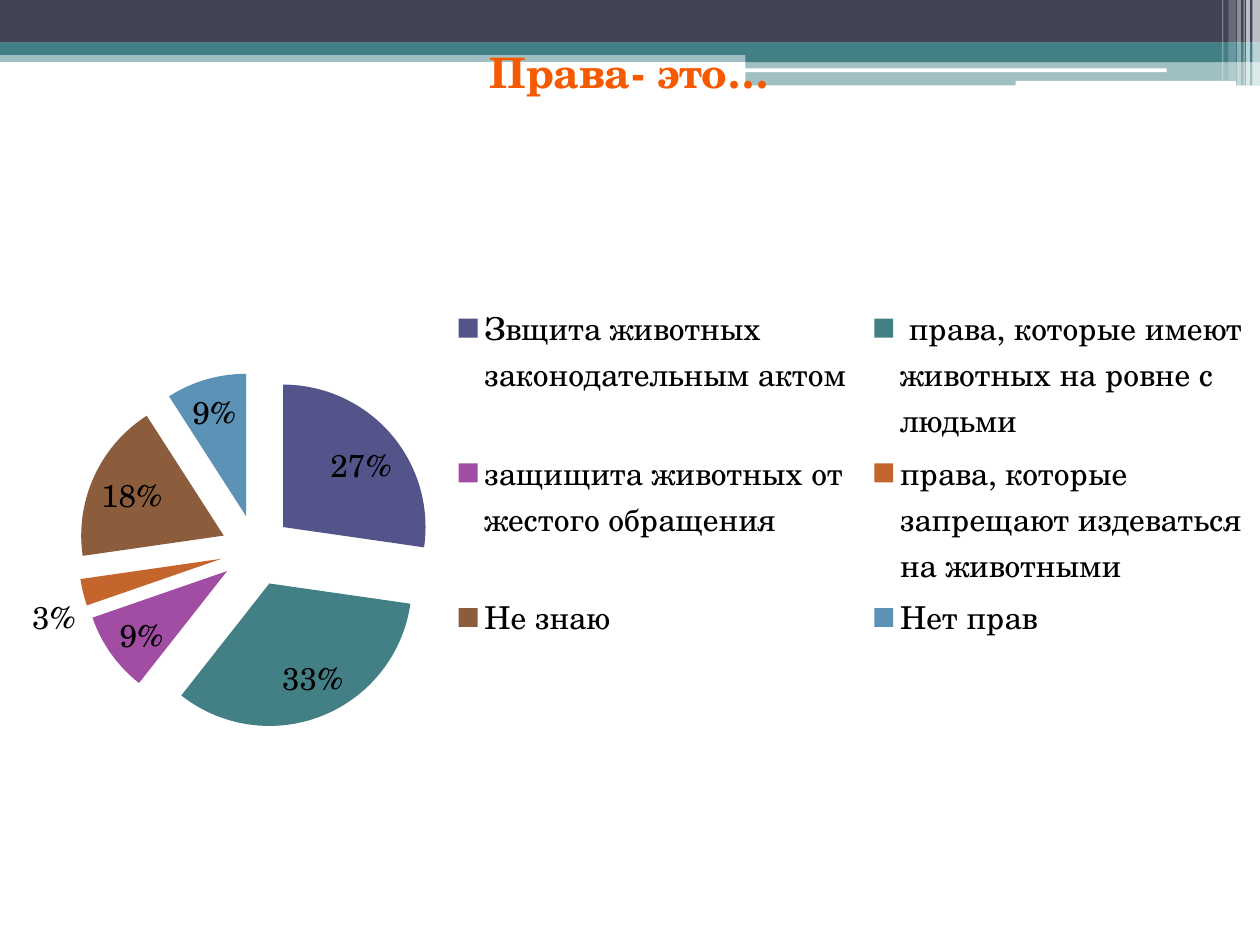
from dataclasses import dataclass

from lxml import etree
from pptx import Presentation
from pptx.chart.data import CategoryChartData
from pptx.dml.color import RGBColor
from pptx.enum import chart as charts, shapes
from pptx.oxml import ns
from pptx.util import Pt


@dataclass(frozen=True)
class Theme:
    dark: str = "424456"
    teal: str = "438086"
    white: str = "FFFFFF"
    black: str = "000000"
    title: str = "F55A00"
    font: str = "TeX Gyre Schola"
    title_size: int = 24
    body_size: int = 18


@dataclass(frozen=True)
class Bar:
    """A strip of the header; lengths in points, opacity in percent."""
    left: float
    top: float
    width: float
    height: float
    color: str
    opacity: int = 100
    rounded: bool = False


@dataclass(frozen=True)
class Answer:
    label: str
    percent: int
    color: str


@dataclass(frozen=True)
class Area:
    """A part of the chart; lengths in points."""
    left: float
    top: float
    width: float | None = None
    height: float | None = None


THEME = Theme()
WIDTH, HEIGHT = 720, 540
TITLE = "Права- это…"
EXPLOSION = 25

BARS = [
    Bar(0, 28.8, WIDTH, 6.6, THEME.teal, 50),
    Bar(0, 0, WIDTH, 24.4, THEME.dark),
    Bar(0, 24.2, WIDTH, 7.2, THEME.teal),
    Bar(426, 28.3, 294, 7.2, THEME.teal),
    Bar(426, 34.7, 294, 14.1, THEME.teal, 50),
    Bar(425.5, 39.1, 241.2, 2.16, THEME.white, rounded=True),
    Bar(580.3, 46.3, 126, 2.9, THEME.white, rounded=True),
    Bar(715.7, 0, 4.3, 48.8, THEME.white, 65),
    Bar(712.1, 0, 2.16, 48.8, THEME.white, 65),
    Bar(710.6, 0, 0.72, 48.8, THEME.white, 60),
    Bar(707, 0, 2.16, 48.8, THEME.white, 40),
    Bar(702, 0, 4.3, 46.1, THEME.white, 20),
    Bar(698.4, 0, 0.72, 46.1, THEME.white, 30),
]

# Line breaks keep the legend narrow enough for two columns.
ANSWERS = [
    Answer("Звщита животных\nзаконодательным актом", 27, "53548A"),
    Answer(" права, которые имеют\nживотных на ровне с\nлюдьми", 33, "438086"),
    Answer("защищита животных от\nжестого обращения", 9, "A04DA3"),
    Answer("права, которые\nзапрещают издеваться\nна животными", 3, "C4652D"),
    Answer("Не знаю", 18, "8B5D3D"),
    Answer("Нет прав", 9, "5C92B5"),
]

TITLE_AREA = Area(275.3, 15)
PIE_AREA = Area(44.6, 212.8, 203.6, 203.6)
LEGEND_AREA = Area(252, 170.5, 468, 199.5)


def draw_bar(slide, bar: Bar) -> None:
    kind = shapes.MSO_SHAPE.ROUNDED_RECTANGLE if bar.rounded else shapes.MSO_SHAPE.RECTANGLE
    shape = slide.shapes.add_shape(
        kind, Pt(bar.left), Pt(bar.top), Pt(bar.width), Pt(bar.height))
    shape.shadow.inherit = False
    shape.line.fill.background()
    shape.fill.solid()
    shape.fill.fore_color.rgb = RGBColor.from_string(bar.color)
    if bar.opacity < 100:
        color = shape.fill._xPr.find(ns.qn("a:solidFill"))[0]
        etree.SubElement(color, ns.qn("a:alpha"), val=str(bar.opacity * 1000))


def format_font(font, *, size: int, color: str, bold: bool = False) -> None:
    font.name = THEME.font
    font.size = Pt(size)
    font.bold = bold
    font.color.rgb = RGBColor.from_string(color)


def write_text(text_frame, text: str, **font_format) -> None:
    run = text_frame.paragraphs[0].add_run()
    run.text = text
    format_font(run.font, **font_format)


def place(element, area: Area, index: int, inner: bool = False) -> None:
    """Give a chart part a manual layout, as child number index."""
    for old in element.findall(ns.qn("c:layout")):
        element.remove(old)
    layout = etree.Element(ns.qn("c:layout"))
    manual = etree.SubElement(layout, ns.qn("c:manualLayout"))
    settings = {"layoutTarget": "inner"} if inner else {}
    settings |= {"xMode": "edge", "yMode": "edge",
                 "x": area.left / WIDTH, "y": area.top / HEIGHT}
    if area.width and area.height:
        settings |= {"w": area.width / WIDTH, "h": area.height / HEIGHT}
    for name, value in settings.items():
        etree.SubElement(manual, ns.qn(f"c:{name}"), val=str(value))
    element.insert(index, layout)


def explode(series) -> None:
    explosion = etree.Element(ns.qn("c:explosion"), val=str(EXPLOSION))
    series._element.find(ns.qn("c:dPt")).addprevious(explosion)


def draw_pie(slide, answers: list[Answer]) -> None:
    data = CategoryChartData()
    data.categories = [answer.label for answer in answers]
    data.add_series(TITLE, [answer.percent for answer in answers])
    chart = slide.shapes.add_chart(
        charts.XL_CHART_TYPE.PIE, 0, 0, Pt(WIDTH), Pt(HEIGHT), data).chart
    format_font(chart.font, size=THEME.body_size, color=THEME.black)

    chart.has_title = True
    write_text(chart.chart_title.text_frame, TITLE,
               size=THEME.title_size, color=THEME.title, bold=True)
    place(chart.chart_title._element, TITLE_AREA, 1)

    chart.has_legend = True
    chart.legend.position = charts.XL_LEGEND_POSITION.RIGHT
    chart.legend.include_in_layout = False
    format_font(chart.legend.font, size=THEME.body_size, color=THEME.black)
    place(chart.legend._element, LEGEND_AREA, 1)

    plot = chart.plots[0]
    plot.vary_by_categories = True
    place(plot._element.getparent(), PIE_AREA, 0, inner=True)
    series = plot.series[0]
    for index, answer in enumerate(answers):
        point = series.points[index].format
        point.fill.solid()
        point.fill.fore_color.rgb = RGBColor.from_string(answer.color)
        point.line.fill.background()
    explode(series)

    plot.has_data_labels = True
    labels = plot.data_labels
    labels.show_value = False
    labels.show_percentage = True
    labels.number_format = "0%"
    labels.number_format_is_linked = False
    labels.position = charts.XL_LABEL_POSITION.BEST_FIT
    format_font(labels.font, size=THEME.body_size, color=THEME.black)


def main() -> None:
    presentation = Presentation()
    presentation.slide_width, presentation.slide_height = Pt(WIDTH), Pt(HEIGHT)
    slide = presentation.slides.add_slide(presentation.slide_layouts[6])
    for bar in BARS:
        draw_bar(slide, bar)
    draw_pie(slide, ANSWERS)
    presentation.save("out.pptx")


if __name__ == "__main__":
    main()
